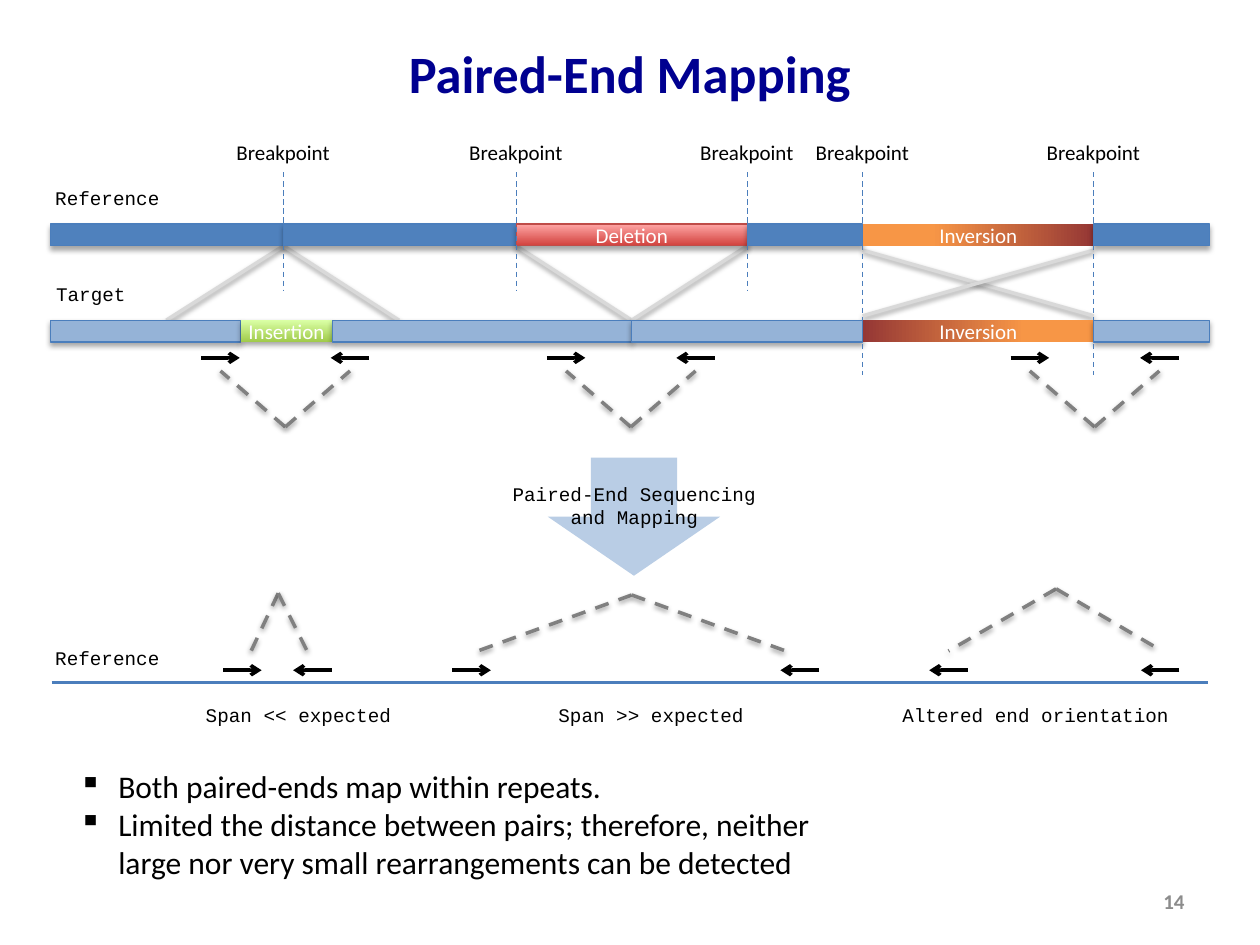
from collections import namedtuple

from lxml.etree import SubElement
from pptx import Presentation
from pptx.dml.color import RGBColor
from pptx.enum.dml import MSO_LINE as DASH
from pptx.enum.shapes import MSO_CONNECTOR as CONNECTOR, MSO_SHAPE as SHAPE
from pptx.enum.text import MSO_ANCHOR as ANCHOR, MSO_AUTO_SIZE as FIT, PP_ALIGN as ALIGN
from pptx.oxml.ns import qn
from pptx.util import Pt

Box = namedtuple("Box", "left top width height")

COLORS = {
    "title": "000090", "text": "000000", "on_bar": "FFFFFF", "number": "8C8C8C",
    "reference": "4F81BD", "target": "95B3D7", "outline": "4B7EBC",
    "link": "D9D9D9", "span": "808080", "read": "000000", "step": "B9CDE5",
    "deletion_edge": "BF4C48",
}
# Gradient: (start colour, start position, end colour, counter-clockwise angle)
GRADIENTS = {
    "insertion": ("A0CA4A", 0, "DAFFA5", 90),
    "deletion": ("D1403C", 0, "FFA6A5", 90),
    "inversion": ("F79646", 0.3, "953735", 0),
    "inverted": ("F79646", 0.3, "953735", 180),
}
MONO = {"font": "Courier New", "size": 11}
BAR_HEIGHT = 12.5


def rgb(name):
    return RGBColor.from_string(COLORS[name])


def add_shadow(effects, opacity, distance):
    shadow = SubElement(effects, qn("a:outerShdw"), blurRad=str(Pt(3.1)),
                        dist=str(Pt(distance)), dir="5400000", rotWithShape="0")
    color = SubElement(shadow, qn("a:srgbClr"), val="000000")
    SubElement(color, qn("a:alpha"), val=str(opacity * 1000))


def write(frame, text, font="Calibri", size=12, color="text", bold=False,
          align=ALIGN.LEFT, anchor=ANCHOR.TOP, wrap=True, bullet=None):
    frame.word_wrap = wrap
    frame.vertical_anchor = anchor
    frame.text = text
    for paragraph in frame.paragraphs:
        paragraph.alignment = align
        style = paragraph.runs[0].font
        style.name, style.size, style.bold = font, Pt(size), bold
        style.color.rgb = rgb(color)
        if bullet:
            properties = paragraph._p.get_or_add_pPr()
            properties.set("marL", str(Pt(22.5)))
            properties.set("indent", str(Pt(-22.5)))
            SubElement(properties, qn("a:buChar"), char=bullet)


def add_text(slide, box, text, fit=True, **form):
    frame = slide.shapes.add_textbox(*map(Pt, box)).text_frame
    write(frame, text, **form)
    frame.auto_size = FIT.SHAPE_TO_FIT_TEXT if fit else FIT.NONE


def add_line(slide, start, end, color, width, dashed=False, arrow=False, shadow=False):
    line = slide.shapes.add_connector(CONNECTOR.STRAIGHT, *map(Pt, (*start, *end)))
    line.line.color.rgb = rgb(color)
    line.line.width = Pt(width)
    if dashed:
        line.line.dash_style = DASH.DASH
    if arrow:
        SubElement(line.line._get_or_add_ln(), qn("a:tailEnd"), type="arrow")
    effects = SubElement(line._element.spPr, qn("a:effectLst"))
    if shadow:
        add_shadow(effects, 38, 1.6)


def add_block(slide, box, fill, outline=None, label="", shadow=True, kind=SHAPE.RECTANGLE):
    block = slide.shapes.add_shape(kind, *map(Pt, box))
    if fill in GRADIENTS:
        start, position, end, angle = GRADIENTS[fill]
        block.fill.gradient()
        block.fill.gradient_angle = angle
        first, last = block.fill.gradient_stops
        first.color.rgb, first.position = RGBColor.from_string(start), position
        last.color.rgb, last.position = RGBColor.from_string(end), 1
    else:
        block.fill.solid()
        block.fill.fore_color.rgb = rgb(fill)
    if outline:
        block.line.color.rgb = rgb(outline)
        block.line.width = Pt(0.75)
    else:
        block.line.fill.background()
    block.shadow.inherit = False
    if shadow:
        add_shadow(block._element.spPr.find(qn("a:effectLst")), 35, 1.8)
    if label:
        frame = block.text_frame
        frame.margin_left = frame.margin_right = 0
        write(frame, label, color="on_bar", align=ALIGN.CENTER, anchor=ANCHOR.MIDDLE)


def add_genome(slide, left, top, cuts, segments):
    """Draw one bar of consecutive segments, each (fill, outline, label)."""
    for start, end, (fill, outline, label) in zip(cuts, cuts[1:], segments):
        add_block(slide, Box(left + start, top, end - start, BAR_HEIGHT), fill, outline,
                  label, shadow=label != "Inversion")


def add_alignment(slide, box):
    """Reference above target, with links and breakpoints between them."""
    reference_top, target_top = box.top + 52, box.top + 107
    reference_cuts = (0, 133, 266, 398, 464, 596, 662)
    target_cuts = (0, 108.5, 161, 332, 464, 596, 662)
    plain = ("reference", "outline", "")
    matched = ("target", "outline", "")

    links = [(133, 66, 0), (133, 199, 0), (266, 332, 0), (398, 332, 0),
             (464, 596, 2.5), (596, 464, 2.5)]
    for upper, lower, gap in links:
        add_line(slide, (box.left + upper, reference_top + BAR_HEIGHT + gap),
                 (box.left + lower, target_top - gap), "link", 2, shadow=True)

    add_genome(slide, box.left, reference_top, reference_cuts,
               [plain, plain, ("deletion", "deletion_edge", "Deletion"), plain,
                ("inversion", None, "Inversion"), plain])
    add_genome(slide, box.left, target_top, target_cuts,
               [matched, ("insertion", None, "Insertion"), matched, matched,
                ("inverted", None, "Inversion"), matched])
    add_text(slide, Box(box.left - 4.5, box.top + 27, 75, 21), "Reference", wrap=False, **MONO)
    add_text(slide, Box(box.left - 4, box.top + 81.5, 55, 21), "Target", wrap=False, **MONO)

    for cut, depth in zip(reference_cuts[1:-1], (90.5, 90.5, 90.5, box.height, box.height)):
        x = box.left + cut
        add_line(slide, (x, box.top + 22.5), (x, box.top + depth), "outline", 0.75, dashed=True)
        add_text(slide, Box(x - 34, box.top, 68.5, 21.5), "Breakpoint", wrap=False)


def add_read_pair(slide, read_y, reads, apex, feet, foot_y):
    """Two read arrows, each (tail, head), and the dashed span between them."""
    for tail, head in reads:
        add_line(slide, (tail, read_y), (head, read_y), "read", 2, arrow=True)
    for foot in feet:
        add_line(slide, apex, (foot, foot_y), "span", 2, dashed=True, shadow=True)


def add_target_reads(slide, box):
    for center in (163, 360.5, 625.5):
        add_read_pair(slide, box.top, [(center - 48, center - 26), (center + 48, center + 26)],
                      (center, box.top + box.height), (center - 37, center + 37), box.top + 7.5)


def add_mapping_step(slide, box):
    add_block(slide, box, "step", shadow=False, kind=SHAPE.DOWN_ARROW)
    add_text(slide, Box(box.left - 36.5, box.top + 10.5, 172, 34),
             "Paired-End Sequencing and Mapping", align=ALIGN.CENTER, **MONO)


def add_mapped_reads(slide, box):
    axis = box.top + box.height
    add_line(slide, (box.left, axis), (box.left + box.width, axis), "outline", 2.25)
    add_text(slide, Box(box.left - 5, axis - 24, 75, 21), "Reference", wrap=False, **MONO)

    outcomes = [
        ("Span << expected", 81, 122, [(98, 120), (160, 138)], (129.5, 2.5), (114, 146)),
        ("Span >> expected", 282.5, 122, [(229, 251), (438.5, 416.5)], (331.5, 3.5), (243.5, 419.5)),
        ("Altered end orientation", 479, 168, [(523.5, 501.5), (644.5, 622.5)], (574, 0), (512.5, 634.5)),
    ]
    for label, start, width, reads, (apex_x, apex_y), feet in outcomes:
        add_read_pair(slide, axis - 7,
                      [(box.left + tail, box.left + head) for tail, head in reads],
                      (box.left + apex_x, box.top + apex_y),
                      [box.left + foot for foot in feet], axis - 18)
        add_text(slide, Box(box.left + start, axis + 8.5, width, 21), label, wrap=False, **MONO)


def main():
    deck = Presentation()
    deck.slide_width, deck.slide_height = Pt(720), Pt(540)
    slide = deck.slides.add_slide(deck.slide_layouts[6])

    add_text(slide, Box(36, 6, 648, 70.5), "Paired-End Mapping", fit=False, size=30,
             color="title", bold=True, align=ALIGN.CENTER, anchor=ANCHOR.MIDDLE)
    add_alignment(slide, Box(29, 76, 662, 138.5))
    add_target_reads(slide, Box(29, 204.5, 662, 39.5))
    add_mapping_step(slide, Box(313, 261.5, 98.5, 67.5))
    add_mapped_reads(slide, Box(29.5, 336.5, 661, 53.5))
    add_text(slide, Box(38, 435, 462, 72.5),
             "Both paired-ends map within repeats.\n"
             "Limited the distance between pairs; therefore, neither "
             "large nor very small rearrangements can be detected", size=18, bullet="▪")
    add_text(slide, Box(516, 500.5, 168, 28.5), "14", fit=False, color="number", bold=True,
             align=ALIGN.RIGHT, anchor=ANCHOR.MIDDLE)
    deck.save("out.pptx")


if __name__ == "__main__":
    main()
